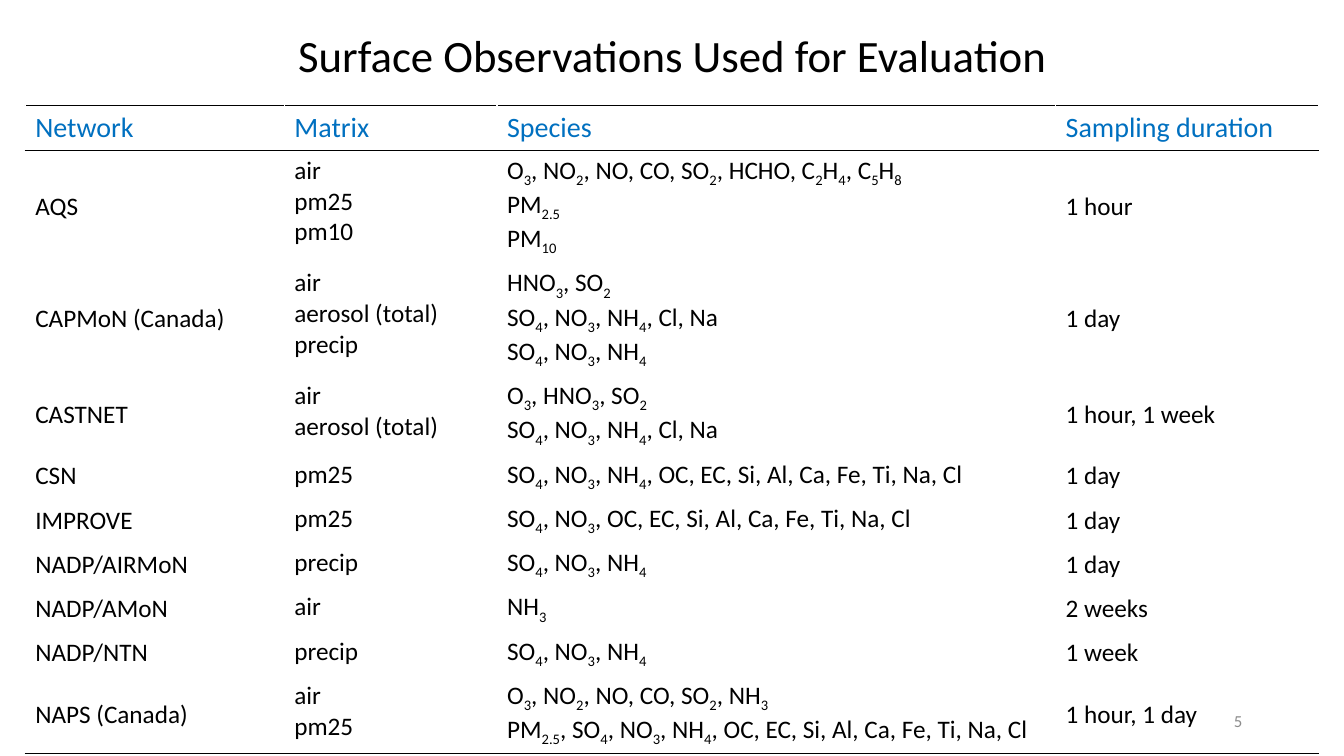
from itertools import groupby

from lxml.etree import SubElement
from pptx import Presentation
from pptx.dml.color import RGBColor
from pptx.enum.text import MSO_ANCHOR as Anchor, PP_ALIGN as Align
from pptx.oxml.ns import qn
from pptx.util import Inches, Pt

COLORS = {"text": "000000", "heading": "0070C0", "page": "FFFFFF", "number": "8C8C8C"}
COLUMN_WIDTHS = [2.57, 2.11, 5.54, 2.61]
ROW_HEIGHT = 0.39
SPECIES_COLUMN = 2
IONS = "SO4, NO3, NH4"
ELEMENTS = "OC, EC, Si, Al, Ca, Fe, Ti, Na, Cl"
HEADINGS = ["Network", "Matrix", "Species", "Sampling duration"]
NETWORKS = [
    ["AQS", "air\npm25\npm10", "O3, NO2, NO, CO, SO2, HCHO, C2H4, C5H8\nPM2.5\nPM10", "1 hour"],
    ["CAPMoN (Canada)", "air\naerosol (total)\nprecip",
     f"HNO3, SO2\n{IONS}, Cl, Na\n{IONS}", "1 day"],
    ["CASTNET", "air\naerosol (total)", f"O3, HNO3, SO2\n{IONS}, Cl, Na", "1 hour, 1 week"],
    ["CSN", "pm25", f"{IONS}, {ELEMENTS}", "1 day"],
    ["IMPROVE", "pm25", f"SO4, NO3, {ELEMENTS}", "1 day"],
    ["NADP/AIRMoN", "precip", IONS, "1 day"],
    ["NADP/AMoN", "air", "NH3", "2 weeks"],
    ["NADP/NTN", "precip", IONS, "1 week"],
    ["NAPS (Canada)", "air\npm25",
     f"O3, NO2, NO, CO, SO2, NH3\nPM2.5, {IONS}, {ELEMENTS}", "1 hour, 1 day"],
]


class SlideBuilder:
    """Hold the text style and the current page, and add elements to it."""

    font_name = "Calibri"

    def __init__(self, page):
        """Start building on the given page."""
        self.page = page

    def style(self, para, size, color, align=Align.LEFT):
        """Format one paragraph."""
        para.alignment = align
        para.font.name = self.font_name
        para.font.size = Pt(size)
        para.font.bold = False
        para.font.color.rgb = RGBColor.from_string(COLORS[color])

    def title(self, text, left, top, width, height):
        """Fill and place the title placeholder."""
        box = self.page.shapes.title
        box.left, box.top, box.width, box.height = map(Inches, (left, top, width, height))
        box.text_frame.text = text
        box.text_frame.vertical_anchor = Anchor.MIDDLE
        para = box.text_frame.paragraphs[0]
        para.line_spacing = 0.9
        self.style(para, 32, "text", Align.CENTER)

    def page_number(self, text, left, top, width, height):
        """Add the right-aligned page number."""
        box = self.page.shapes.add_textbox(*map(Inches, (left, top, width, height)))
        box.text_frame.word_wrap = True
        box.text_frame.vertical_anchor = Anchor.MIDDLE
        box.text_frame.text = text
        self.style(box.text_frame.paragraphs[0], 12, "number", Align.RIGHT)

    def formula(self, para, text):
        """Write chemical formulas with their digits as subscripts."""
        for is_subscript, letters in groupby(text, lambda letter: letter in "0123456789."):
            span = para.add_run()
            span.text = "".join(letters)
            if is_subscript:
                span.font._element.set("baseline", "-25000")

    def borders(self, cell, top, bottom):
        """Draw the four borders of a cell, white at the sides."""
        properties = cell._tc.get_or_add_tcPr()
        sides = {"lnL": "page", "lnR": "page", "lnT": top, "lnB": bottom}
        for side, color in sides.items():
            line = SubElement(properties, qn(f"a:{side}"), w=str(Pt(1)))
            fill = SubElement(line, qn("a:solidFill"))
            SubElement(fill, qn("a:srgbClr"), val=COLORS[color])

    def table(self, rows, widths, left, top):
        """Add the table, ruled around the heading row and at the end."""
        frame = self.page.shapes.add_table(
            len(rows), len(widths), Inches(left), Inches(top),
            Inches(sum(widths)), Inches(ROW_HEIGHT * len(rows)))
        table = frame.table
        table.first_row = table.horz_banding = False
        for column, width in zip(table.columns, widths):
            column.width = Inches(width)
        for row_index, row in enumerate(rows):
            is_heading = row_index == 0
            top_rule = "text" if row_index <= 1 else "page"
            bottom_rule = "text" if row_index in (0, len(rows) - 1) else "page"
            for column_index, text in enumerate(row):
                cell = table.cell(row_index, column_index)
                self.borders(cell, top_rule, bottom_rule)
                cell.fill.background()
                if not is_heading and column_index in (0, len(row) - 1):
                    cell.vertical_anchor = Anchor.MIDDLE
                for line_index, line in enumerate(text.split("\n")):
                    words = cell.text_frame
                    para = words.add_paragraph() if line_index else words.paragraphs[0]
                    if column_index == SPECIES_COLUMN:
                        self.formula(para, line)
                    else:
                        para.add_run().text = line
                    self.style(para, *((20, "heading") if is_heading else (18, "text")))


def main():
    """Build and save the deck."""
    deck = Presentation()
    deck.slide_width, deck.slide_height = Inches(13.33), Inches(7.5)
    builder = SlideBuilder(deck.slides.add_slide(deck.slide_layouts[5]))
    builder.title("Surface Observations Used for Evaluation", 0.92, 0.22, 11.5, 0.71)
    builder.table([HEADINGS] + NETWORKS, COLUMN_WIDTHS, 0.25, 1.05)
    builder.page_number("5", 9.42, 6.95, 3, 0.4)
    deck.save("out.pptx")


if __name__ == "__main__":
    main()
